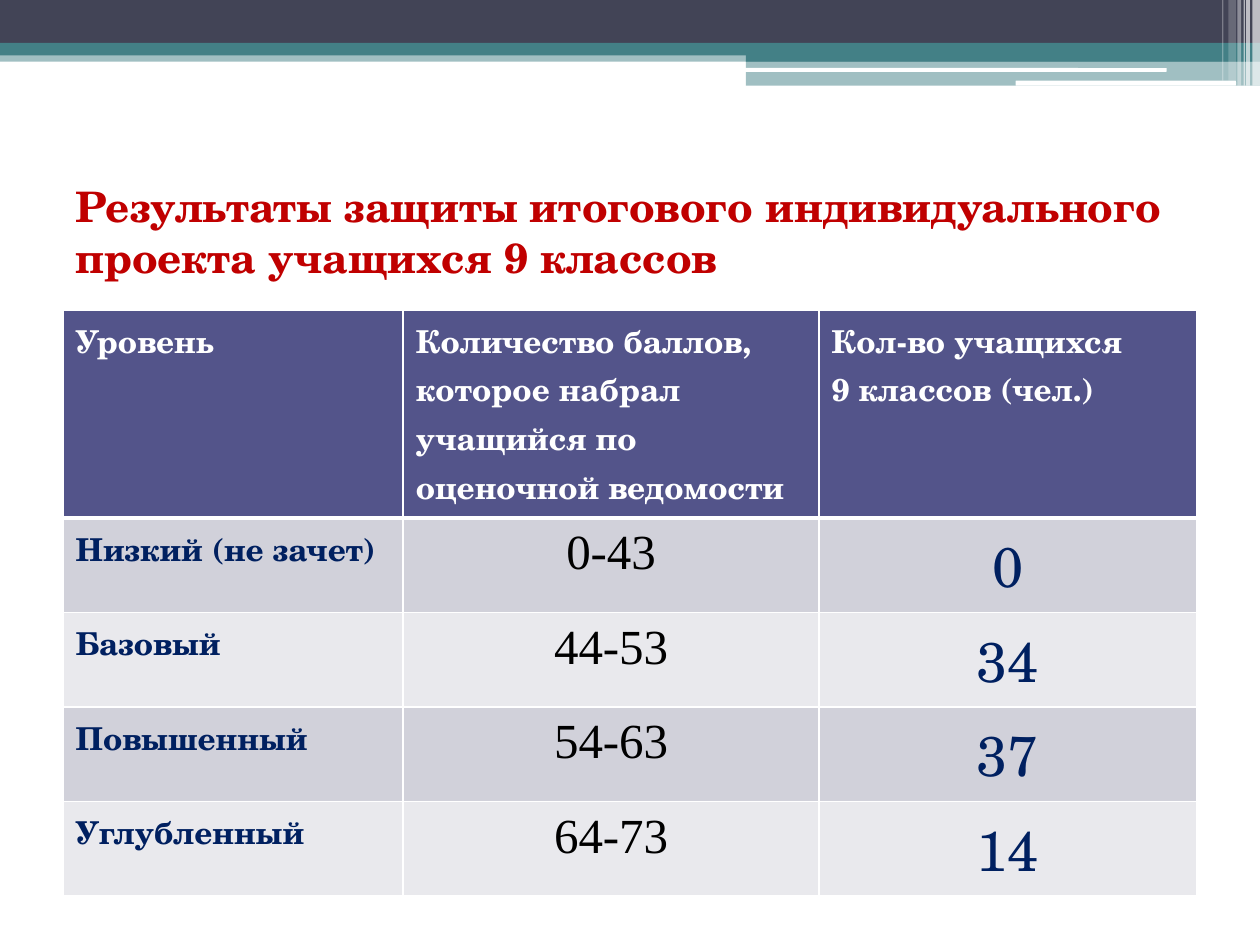
"""Build the slide with the table of ninth-grade project results."""
from dataclasses import dataclass

from lxml.etree import SubElement
from pptx import Presentation
from pptx.dml.color import RGBColor as RGB
from pptx.enum.shapes import MSO_SHAPE as Kind
from pptx.enum.text import MSO_ANCHOR as Anchor, PP_ALIGN as Align
from pptx.oxml.ns import qn
from pptx.util import Inches, Pt


@dataclass(frozen=True)
class Theme:
    teal: str = "438086"
    slate: str = "424456"
    white: str = "FFFFFF"
    black: str = "000000"
    red: str = "C00000"
    navy: str = "002060"
    head: str = "53548A"
    bands: tuple = ("D1D1DA", "E9E9ED")
    serif: str = "TeX Gyre Schola"
    roman: str = "Times New Roman"
    title: int = 24
    label: int = 18
    score: int = 28
    count: int = 32


def write(para, text, size, color, font, bold=False):
    run = para.add_run()
    run.text = text
    run.font.size = Pt(size)
    run.font.name = font
    run.font.bold = bold
    run.font.color.rgb = RGB.from_string(color)


def edge(cell, side, width):
    line = SubElement(cell._tc.get_or_add_tcPr(), qn(f"a:{side}"), w=str(Pt(width)))
    fill = SubElement(line, qn("a:solidFill"))
    SubElement(fill, qn("a:srgbClr"), val=theme.white)


theme = Theme()
deck = Presentation()
deck.slide_width, deck.slide_height = Inches(10), Inches(7.5)
slide = deck.slides.add_slide(deck.slide_layouts[6])

bars = [
    (Kind.RECTANGLE, 0, 0.4, 10, 0.09, theme.teal, 50),
    (Kind.RECTANGLE, 0, 0, 10, 0.34, theme.slate, 100),
    (Kind.RECTANGLE, 0, 0.34, 10, 0.1, theme.teal, 100),
    (Kind.RECTANGLE, 5.92, 0.39, 4.08, 0.1, theme.teal, 100),
    (Kind.RECTANGLE, 5.92, 0.48, 4.08, 0.2, theme.teal, 50),
    (Kind.ROUNDED_RECTANGLE, 5.91, 0.54, 3.35, 0.03, theme.white, 100),
    (Kind.ROUNDED_RECTANGLE, 8.06, 0.64, 1.75, 0.04, theme.white, 100),
]
stripes = [
    (9.94, 0.06, 0.68, 65),
    (9.89, 0.03, 0.68, 65),
    (9.87, 0.01, 0.68, 60),
    (9.82, 0.03, 0.68, 40),
    (9.75, 0.06, 0.64, 20),
    (9.7, 0.01, 0.64, 30),
]
for left, width, height, alpha in stripes:
    bars.append((Kind.RECTANGLE, left, 0, width, height, theme.white, alpha))

for kind, left, top, width, height, color, alpha in bars:
    bar = slide.shapes.add_shape(
        kind, Inches(left), Inches(top), Inches(width), Inches(height))
    bar.shadow.inherit = False
    bar.line.fill.background()
    bar.fill.solid()
    bar.fill.fore_color.rgb = RGB.from_string(color)
    if alpha < 100:
        tint = bar._element.spPr.find(f".//{qn('a:srgbClr')}")
        SubElement(tint, qn("a:alpha"), val=str(alpha * 1000))

title = slide.shapes.add_textbox(Inches(0.5), Inches(1.25), Inches(9), Inches(1.17))
title.text_frame.word_wrap = True
title.text_frame.vertical_anchor = Anchor.MIDDLE
write(title.text_frame.paragraphs[0],
      "Результаты защиты итогового индивидуального проекта учащихся 9 классов",
      theme.title, theme.red, theme.serif, True)

rows = [
    ("Уровень", "Количество баллов, которое набрал учащийся по оценочной ведомости",
     "Кол-во учащихся\n9 классов (чел.)"),
    ("Низкий (не зачет)", "0-43", "0"),
    ("Базовый", "44-53", "34"),
    ("Повышенный", "54-63", "37"),
    ("Углубленный", "64-73", "14"),
]
styles = [
    (theme.label, theme.navy, theme.serif, True),
    (theme.score, theme.black, theme.roman, False),
    (theme.count, theme.navy, theme.serif, False),
]
table = slide.shapes.add_table(
    len(rows), 3, Inches(0.5), Inches(2.46), Inches(9), Inches(4.65)).table
for col, width in zip(table.columns, (2.7, 3.3, 3)):
    col.width = Inches(width)

for r, row in enumerate(rows):
    table.rows[r].height = Inches(0.75 if r else 1.65)
    for c, text in enumerate(row):
        cell = table.cell(r, c)
        for side in ("lnL", "lnR", "lnT", "lnB"):
            thick = (r, side) in ((0, "lnB"), (1, "lnT"))
            edge(cell, side, 3 if thick else 1)
        cell.fill.solid()
        cell.fill.fore_color.rgb = RGB.from_string(
            theme.bands[(r - 1) % 2] if r else theme.head)
        style = styles[c] if r else (theme.label, theme.white, theme.serif, True)
        for n, line in enumerate(text.split("\n")):
            frame = cell.text_frame
            para = frame.add_paragraph() if n else frame.paragraphs[0]
            write(para, line, *style)
            if r and c:
                para.alignment = Align.CENTER
        if r and c == 1:
            cell.margin_left = cell.margin_right = Inches(0.07)
            cell.margin_top = cell.margin_bottom = 0
            para.line_spacing = 1.15

deck.save("out.pptx")
